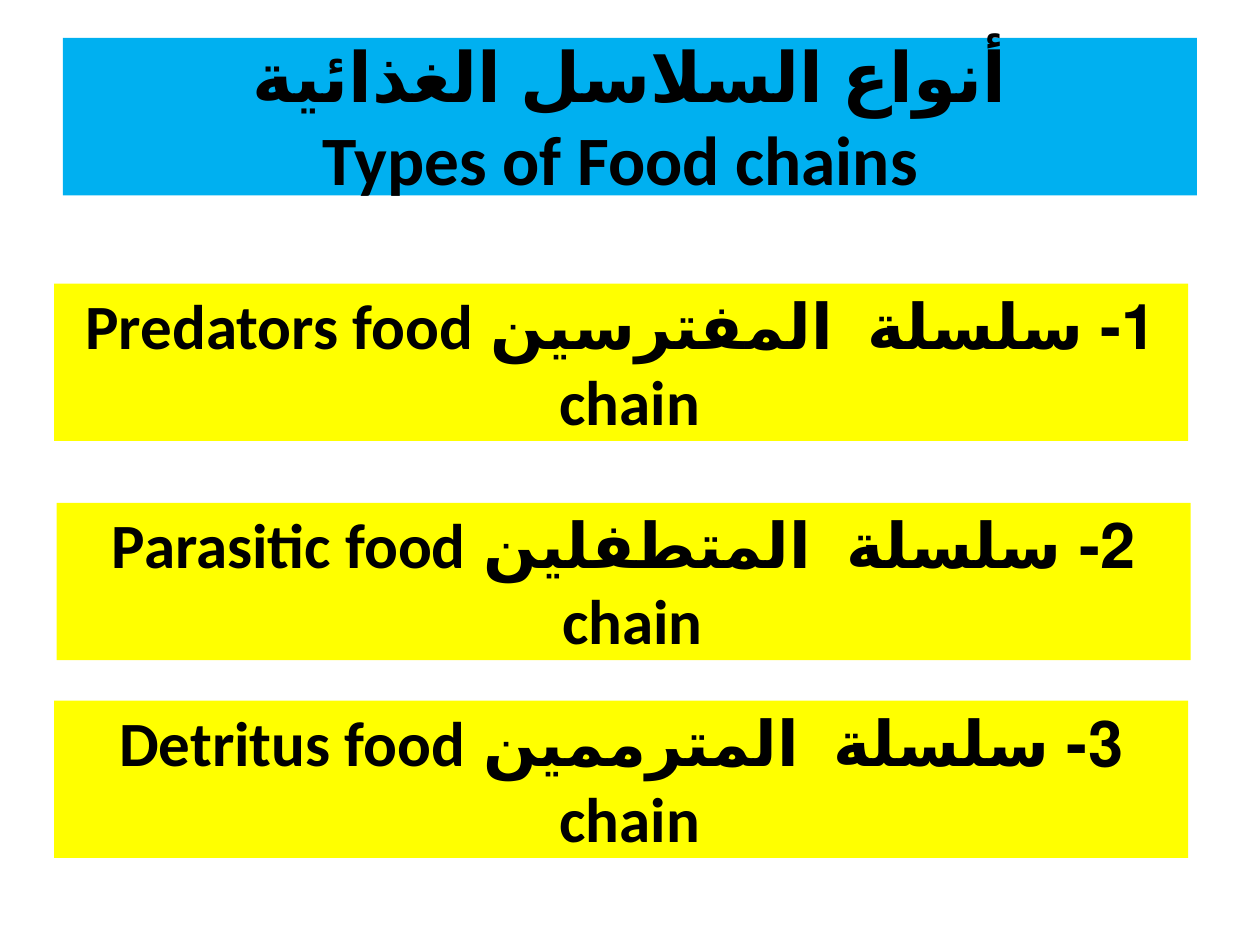
from dataclasses import dataclass

from pptx import Presentation
from pptx.dml.color import RGBColor
from pptx.enum.lang import MSO_LANGUAGE_ID
from pptx.enum.shapes import MSO_SHAPE
from pptx.enum.text import MSO_ANCHOR, PP_ALIGN
from pptx.util import Inches, Pt

RECTANGLE = MSO_SHAPE.RECTANGLE
MIDDLE = MSO_ANCHOR.MIDDLE
CENTER = PP_ALIGN.CENTER
ARABIC = MSO_LANGUAGE_ID.ARABIC_IRAQ
BLANK_LAYOUT = 6


@dataclass(frozen=True)
class Theme:
    font: str = "Calibri"
    text: RGBColor = RGBColor(0x00, 0x00, 0x00)
    title_fill: RGBColor = RGBColor(0x00, 0xB0, 0xF0)
    chain_fill: RGBColor = RGBColor(0xFF, 0xFF, 0x00)
    title_size: float = 39.6
    chain_size: float = 36


@dataclass(frozen=True)
class Banner:
    text: str
    left: float
    top: float
    fill: RGBColor
    size: float


THEME = Theme()
BANNER_WIDTH, BANNER_HEIGHT = 9, 1.25


def chain_banner(text: str, left: float, top: float) -> Banner:
    return Banner(text, left, top, THEME.chain_fill, THEME.chain_size)


# A vertical tab is a line break within the paragraph
BANNERS = [
    Banner("أنواع السلاسل الغذائية\v Types of Food chains", 0.5, 0.3,
           THEME.title_fill, THEME.title_size),
    chain_banner("1- سلسلة  المفترسين Predators food chain ", 0.43, 2.25),
    chain_banner("2- سلسلة  المتطفلين Parasitic food chain ", 0.45, 3.99),
    chain_banner("3- سلسلة  المترممين Detritus food chain ", 0.43, 5.56),
]


def draw_banner(page, banner: Banner) -> None:
    # Filled box
    box = page.shapes.add_shape(
        RECTANGLE, Inches(banner.left), Inches(banner.top),
        Inches(BANNER_WIDTH), Inches(BANNER_HEIGHT))
    box.shadow.inherit = False
    box.fill.solid()
    box.fill.fore_color.rgb = banner.fill
    box.line.fill.background()

    # Right-to-left centred text
    frame = box.text_frame
    frame.word_wrap = True
    frame.vertical_anchor = MIDDLE
    para = frame.paragraphs[0]
    para.text = banner.text
    para.alignment = CENTER
    para._p.get_or_add_pPr().set("rtl", "1")
    para.font.name = THEME.font
    para.font.size = Pt(banner.size)
    para.font.bold = True
    para.font.color.rgb = THEME.text

    # The language guides the choice of Arabic glyphs
    for span in para.runs:
        span.font.language_id = ARABIC


def main() -> None:
    deck = Presentation()
    deck.slide_width, deck.slide_height = Inches(10), Inches(7.5)
    page = deck.slides.add_slide(deck.slide_layouts[BLANK_LAYOUT])
    for banner in BANNERS:
        draw_banner(page, banner)
    deck.save("out.pptx")


if __name__ == "__main__":
    main()
